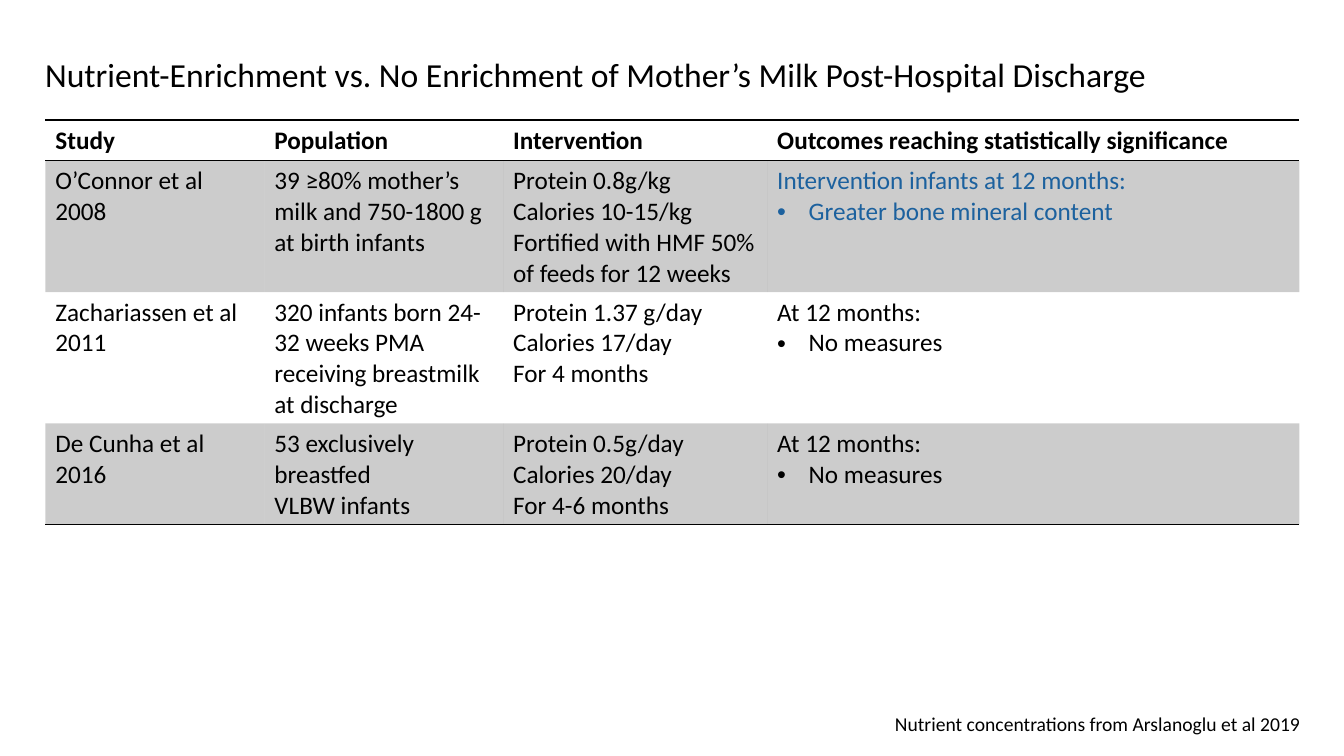
"""Builds a slide comparing studies of nutrient-enriched mother's milk after discharge."""
from lxml import etree
from pptx import Presentation, util as u
from pptx.dml.color import RGBColor
from pptx.enum import text
from pptx.oxml.ns import qn

Pt = u.Pt
COLOURS = {"black": "000000", "blue": "1C619E"}
FONT = "Calibri"
NO_STYLE = "{2D5ABB26-0587-4C30-8999-92F81FD0307C}"
BULLET = "• "


def add_span(para, words, size, colour="black", bold=False):
    span = para.add_run()
    span.text = words
    span.font.name = FONT
    span.font.size = Pt(size)
    span.font.bold = bold
    span.font.color.rgb = RGBColor.from_string(COLOURS[colour])


def add_border(cell, side):
    line = etree.Element(qn(f"a:{side}"), w=str(Pt(1)))
    fill = etree.SubElement(line, qn("a:solidFill"))
    etree.SubElement(fill, qn("a:srgbClr"), val=COLOURS["black"])
    cell._tc.get_or_add_tcPr().insert(0, line)


deck = Presentation()
deck.slide_width, deck.slide_height = Pt(960), Pt(540)
page = deck.slides.add_slide(deck.slide_layouts[6])

labels = [
    ("Nutrient-Enrichment vs. No Enrichment of Mother’s Milk Post-Hospital Discharge",
     25.2, 35.3, 809.3, 36, 24),
    ("Nutrient concentrations from Arslanoglu et al 2019", 632.2, 504.7, 306.7, 24.5, 14),
]
for words, left, top, width, height, size in labels:
    box = page.shapes.add_textbox(Pt(left), Pt(top), Pt(width), Pt(height))
    box.text_frame.word_wrap = False
    box.text_frame.auto_size = text.MSO_AUTO_SIZE.SHAPE_TO_FIT_TEXT
    add_span(box.text_frame.paragraphs[0], words, size)

studies = [
    [["Study"], ["Population"], ["Intervention"],
     ["Outcomes reaching statistically significance"]],
    [["O’Connor et al", "2008"],
     ["39 ≥80% mother’s milk and 750-1800 g at birth infants"],
     ["Protein 0.8g/kg", "Calories 10-15/kg",
      "Fortified with HMF 50% of feeds for 12 weeks"],
     ["Intervention infants at 12 months:", "• Greater bone mineral content"]],
    [["Zachariassen et al 2011"],
     ["320 infants born 24-32 weeks PMA receiving breastmilk at discharge"],
     ["Protein 1.37 g/day", "Calories 17/day", "For 4 months"],
     ["At 12 months:", "• No measures"]],
    [["De Cunha et al", "2016"],
     ["53 exclusively breastfed", "VLBW infants"],
     ["Protein 0.5g/day", "Calories 20/day", "For 4-6 months"],
     ["At 12 months:", "• No measures"]],
]
widths = [156.4, 170.6, 188.6, 380.2]
heights = [29.2, 93.8, 93.8, 72]
borders = {0: ["lnB", "lnT"], 3: ["lnB"]}

table = page.shapes.add_table(len(heights), len(widths), Pt(32.4), Pt(85.7),
                              Pt(sum(widths)), Pt(sum(heights))).table
table.first_row = table.horz_banding = False
table._tbl.tblPr.find(qn("a:tableStyleId")).text = NO_STYLE
for column, width in zip(table.columns, widths):
    column.width = Pt(width)

for r, (study, height) in enumerate(zip(studies, heights)):
    table.rows[r].height = Pt(height)
    for c, lines in enumerate(study):
        cell = table.cell(r, c)
        if r % 2:
            cell.fill.solid()
            cell.fill.fore_color.rgb = RGBColor.from_string(COLOURS["black"])
            shade = cell._tc.tcPr.find(f"{qn('a:solidFill')}/{qn('a:srgbClr')}")
            etree.SubElement(shade, qn("a:alpha"), val="20000")
        else:
            cell.fill.background()
        for side in borders.get(r, []):
            add_border(cell, side)
        colour = "blue" if (r, c) == (1, 3) else "black"
        for i, line in enumerate(lines):
            para = cell.text_frame.add_paragraph() if i else cell.text_frame.paragraphs[0]
            if line.startswith(BULLET):
                props = para._p.get_or_add_pPr()
                props.set("marL", str(Pt(22.5)))
                props.set("indent", str(-Pt(22.5)))
                etree.SubElement(props, qn("a:buFont"), typeface="Arial")
                etree.SubElement(props, qn("a:buChar"), char=BULLET.strip())
            add_span(para, line.removeprefix(BULLET), 18, colour, bold=r == 0)

deck.save("out.pptx")
